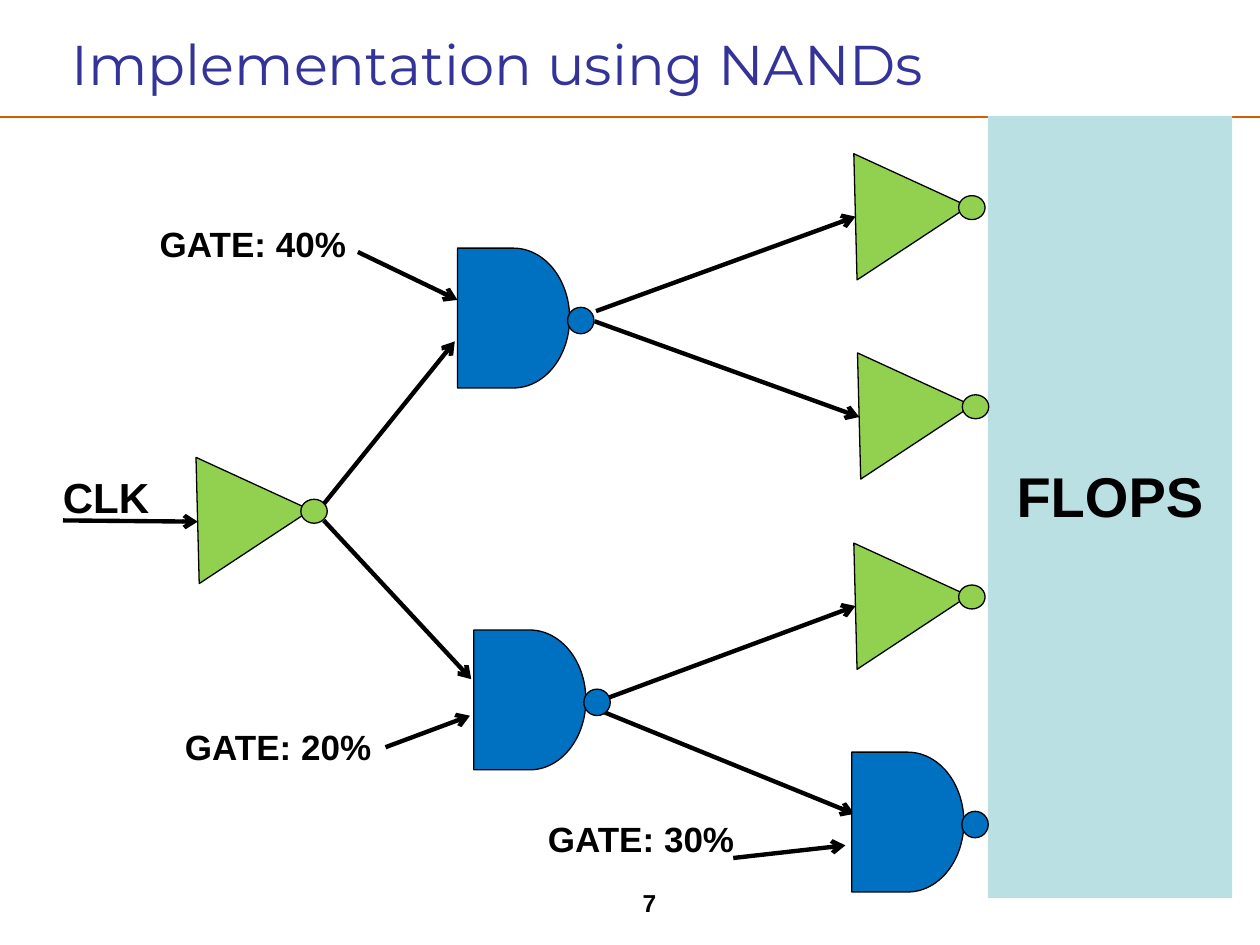
from lxml.etree import SubElement
from pptx import Presentation
from pptx.dml.color import RGBColor
from pptx.enum.shapes import MSO_CONNECTOR, MSO_SHAPE
from pptx.enum.text import MSO_ANCHOR, PP_ALIGN
from pptx.oxml.ns import qn
from pptx.util import Pt

GREEN, BLUE, PANEL = "92D050", "0070C0", "BBE0E3"
BLACK, TITLE, RULE = "000000", "333399", "D55C01"

# Left and top of each gate body, in points
INVERTERS = [(90.7, 256.3), (466.6, 82.8), (468.7, 196.6), (466.6, 305.3)]
NANDS = [(261.4, 141.8), (270.7, 360), (486.7, 429.8)]

# Start x, start y, end x, end y
WIRES = [
    (36, 297.4, 113, 298.1),          # clock into root inverter
    (185, 288, 259.9, 195.1),         # root inverter to NANDs
    (185, 297.4, 269.3, 388.1),
    (340.6, 177.8, 488.9, 123.8),     # upper NAND to leaves
    (339.8, 183.6, 491, 238.3),
    (343.4, 400.3, 488.9, 346.3),     # lower NAND to leaves
    (341.3, 405.4, 488.2, 465.1),
    (204.5, 144, 261.4, 171.4),       # gating signals
    (220.3, 427, 268.6, 409),
    (419, 490.3, 483.1, 483.1),
]

# Text, left, top, width, height, size
SIGNALS = [
    ("CLK", 28.8, 265.7, 64.1, 36, 24),
    ("GATE: 40%", 84.2, 123.8, 121.7, 31.7, 20),
    ("GATE: 20%", 98.6, 411.1, 121.7, 31.7, 20),
    ("GATE: 30%", 306, 463.7, 121.7, 31.7, 20),
]


def color(hex_value):
    return RGBColor.from_string(hex_value)


def apply_format(target, values):
    for name, value in values.items():
        setattr(target, name, value)


def write(frame, text, size, ink=BLACK, font="Arial", bold=True,
          align=PP_ALIGN.LEFT, **frame_format):
    apply_format(frame, frame_format)
    paragraph = frame.paragraphs[0]
    paragraph.alignment = align
    run = paragraph.add_run()
    run.text = text
    apply_format(run.font, {"name": font, "size": Pt(size), "bold": bold})
    run.font.color.rgb = color(ink)


def add_label(slide, text, left, top, width, height, size, **text_format):
    label = slide.shapes.add_textbox(Pt(left), Pt(top), Pt(width), Pt(height))
    write(label.text_frame, text, size, **text_format)


def add_block(slide, preset, left, top, width, height, fill, outline=True, rotation=0):
    block = slide.shapes.add_shape(preset, Pt(left), Pt(top), Pt(width), Pt(height))
    block.shadow.inherit = False
    block.rotation = rotation
    block.fill.solid()
    block.fill.fore_color.rgb = color(fill)
    if outline:
        block.line.color.rgb = color(BLACK)
        block.line.width = Pt(0.75)
    else:
        block.line.fill.background()
    return block


def add_line(slide, x1, y1, x2, y2, ink=BLACK, width=2.5, arrow=True):
    line = slide.shapes.add_connector(
        MSO_CONNECTOR.STRAIGHT, Pt(x1), Pt(y1), Pt(x2), Pt(y2))
    line.line.color.rgb = color(ink)
    line.line.width = Pt(width)
    if arrow:
        SubElement(line.line._get_or_add_ln(), qn("a:tailEnd"), type="arrow")
    SubElement(line._element.spPr, qn("a:effectLst"))


def add_inverter(slide, left, top):
    add_block(slide, MSO_SHAPE.ISOSCELES_TRIANGLE, left, top, 76.3, 61.2, GREEN,
              rotation=326.6)
    add_block(slide, MSO_SHAPE.OVAL, left + 81.2, top + 29, 15.1, 13.7, GREEN)


def add_nand(slide, left, top):
    add_block(slide, MSO_SHAPE.FLOWCHART_DELAY, left, top, 64.1, 79.9, BLUE)
    add_block(slide, MSO_SHAPE.OVAL, left + 62.9, top + 33.8, 15.1, 15.1, BLUE)


def main():
    deck = Presentation()
    deck.slide_width, deck.slide_height = Pt(720), Pt(540)
    slide = deck.slides.add_slide(deck.slide_layouts[6])

    # Heading and page number
    add_line(slide, 0, 67, 720, 67, RULE, 1, arrow=False)
    add_label(slide, "Implementation using NANDs", 33.8, 7.9, 651.6, 56.2, 32,
              ink=TITLE, font="Montserrat", bold=False, word_wrap=True,
              vertical_anchor=MSO_ANCHOR.MIDDLE)
    add_label(slide, "7", 287.3, 504, 167.8, 28.8, 14, word_wrap=True,
              align=PP_ALIGN.CENTER)

    # Flip-flop bank
    flops = add_block(slide, MSO_SHAPE.RECTANGLE, 564.5, 66.2, 139.7, 447.1, PANEL,
                      outline=False)
    write(flops.text_frame, "FLOPS", 32, align=PP_ALIGN.CENTER,
          vertical_anchor=MSO_ANCHOR.MIDDLE, margin_bottom=Pt(17))

    # Clock tree
    for position in INVERTERS:
        add_inverter(slide, *position)
    for ends in WIRES:
        add_line(slide, *ends)
    for position in NANDS:
        add_nand(slide, *position)

    # Signal names
    for signal in SIGNALS:
        add_label(slide, *signal, word_wrap=False)

    deck.save("out.pptx")


if __name__ == "__main__":
    main()
